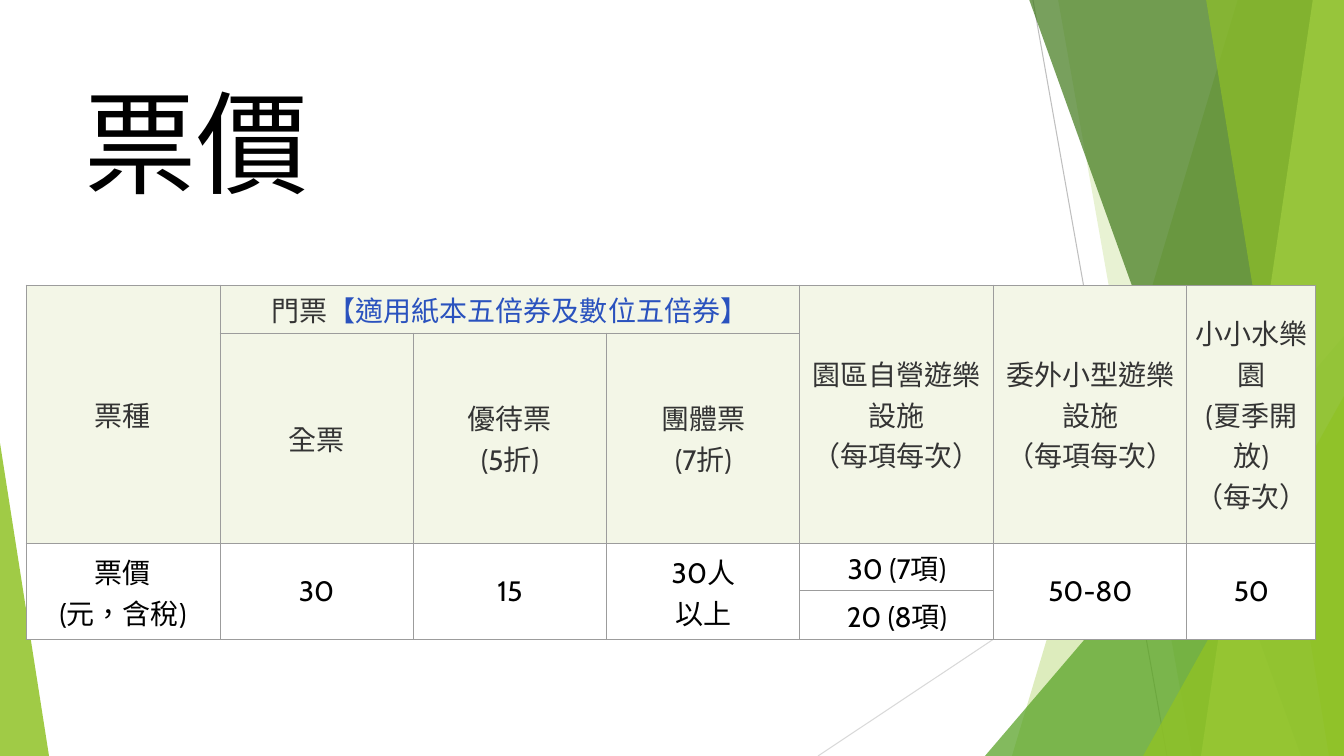
from lxml import etree
from pptx import Presentation
from pptx.dml.color import RGBColor
from pptx.enum.lang import MSO_LANGUAGE_ID
from pptx.enum.shapes import MSO_CONNECTOR, MSO_SHAPE
from pptx.enum.text import MSO_ANCHOR, PP_ALIGN
from pptx.oxml import parse_xml
from pptx.oxml.ns import nsdecls, qn
from pptx.util import Emu, Pt

PX = 914400 / 100.8
WIDTH, HEIGHT = 1344, 756
CJK_FONT = "Noto Sans CJK SC"
LATIN_FONT = "Cabin"
HEADER_FILL, PRICE_FILL = "F3F6E7", "FFFFFF"
HEADER_TEXT, PRICE_TEXT, VOUCHER_TEXT = "343434", "000000", "2A52BE"
BORDER = "9C9C9C"

TABLE_LEFT, TABLE_TOP = 26, 285
COLUMN_WIDTHS = [194, 193, 194, 193, 194, 193, 129]
ROW_HEIGHTS = [48, 210, 48, 49]

# (row, column, rows spanned, columns spanned, text)
CELLS = [
    (0, 0, 2, 1, "票種"),
    (0, 1, 1, 3, "門票"),
    (0, 4, 2, 1, "園區自營遊樂設施\v（每項每次）"),
    (0, 5, 2, 1, "委外小型遊樂設施\v（每項每次）"),
    (0, 6, 2, 1, "小小水樂園\v(夏季開放)\v（每次）"),
    (1, 1, 1, 1, "全票"),
    (1, 2, 1, 1, "優待票\v(5折)"),
    (1, 3, 1, 1, "團體票\v(7折)"),
    (2, 0, 2, 1, "票價\v(元，含稅)"),
    (2, 1, 2, 1, "30"),
    (2, 2, 2, 1, "15"),
    (2, 3, 2, 1, "30人\v以上"),
    (2, 4, 1, 1, "30 (7項)"),
    (3, 4, 1, 1, "20 (8項)"),
    (2, 5, 2, 1, "50-80"),
    (2, 6, 2, 1, "50"),
]


def px(length):
    return Emu(round(length * PX))


def rgb(color):
    return RGBColor.from_string(color)


def style_span(span, size, color, font):
    span.font.size = Pt(size)
    span.font.name = font
    span.font.color.rgb = rgb(color)
    span.font.language_id = MSO_LANGUAGE_ID.TRADITIONAL_CHINESE
    east_asian = etree.SubElement(span.font._element, qn("a:ea"))
    east_asian.set("typeface", CJK_FONT)


def paint(shape, color, opacity):
    """Fill a borderless shape with a colour at the given percent opacity."""
    shape.shadow.inherit = False
    shape.fill.solid()
    shape.fill.fore_color.rgb = rgb(color)
    shape.line.fill.background()
    color_node = shape._element.spPr.find(qn("a:solidFill"))[0]
    etree.SubElement(color_node, qn("a:alpha")).set("val", str(opacity * 1000))


def add_line(slide, start, end, color):
    line = slide.shapes.add_connector(
        MSO_CONNECTOR.STRAIGHT, *map(px, (*start, *end)))
    line.line.color.rgb = rgb(color)
    line.line.width = Pt(0.75)
    etree.SubElement(line._element.spPr, qn("a:effectLst"))


def add_band(slide, top_left, bottom_left, color, opacity):
    """Draw a full-height band that reaches the right edge of the slide."""
    builder = slide.shapes.build_freeform(top_left, -1, scale=PX)
    builder.add_line_segments(
        [(WIDTH, -1), (WIDTH, HEIGHT), (bottom_left, HEIGHT)], close=True)
    paint(builder.convert_to_shape(), color, opacity)


def add_triangle(slide, left, top, width, apex, color, opacity):
    """Draw a triangle that stands on the bottom edge of the slide."""
    triangle = slide.shapes.add_shape(
        MSO_SHAPE.ISOSCELES_TRIANGLE,
        *map(px, (left, top, width, HEIGHT - top)))
    triangle.adjustments[0] = apex
    paint(triangle, color, opacity)


def add_background(slide):
    add_line(slide, (1033, 0), (1167, HEIGHT), "BFBFBF")
    add_line(slide, (WIDTH, 406), (818, HEIGHT), "D9D9D9")
    add_band(slide, 1238, 1012, "90C226", 30)
    add_band(slide, 1058, 1192, "90C226", 20)
    add_triangle(slide, 985, 336, 359, 1, "54A021", 72)
    add_band(slide, 1029, 1301, "3F7819", 70)
    add_band(slide, 1313, 1201, "C0E474", 70)
    add_band(slide, 1206, 1329, "90C226", 65)
    add_triangle(slide, 1143, 396, 201, 1, "90C226", 80)
    add_triangle(slide, 0, 443, 49, 0, "90C226", 85)


def add_title(slide, text):
    box = slide.shapes.add_textbox(*map(px, (75, 68, 948, 145)))
    frame = box.text_frame
    frame.word_wrap = True
    frame.vertical_anchor = MSO_ANCHOR.MIDDLE
    frame.text = text
    style_span(frame.paragraphs[0].runs[0], 80, "000000", CJK_FONT)


def add_borders(cell):
    properties = cell._tc.get_or_add_tcPr()
    for index, side in enumerate(("lnL", "lnR", "lnT", "lnB")):
        properties.insert(index, parse_xml(
            f'<a:{side} {nsdecls("a")} w="{Pt(0.75)}"><a:solidFill>'
            f'<a:srgbClr val="{BORDER}"/></a:solidFill></a:{side}>'))


def fill_cell(cell, text, color):
    cell.vertical_anchor = MSO_ANCHOR.MIDDLE
    para = cell.text_frame.paragraphs[0]
    para.text = text
    para.alignment = PP_ALIGN.CENTER
    for span in para.runs:
        style_span(span, 20, color, LATIN_FONT)
    return para


def add_price_table(slide):
    table = slide.shapes.add_table(
        len(ROW_HEIGHTS), len(COLUMN_WIDTHS), px(TABLE_LEFT), px(TABLE_TOP),
        px(sum(COLUMN_WIDTHS)), px(sum(ROW_HEIGHTS))).table
    for column, width in zip(table.columns, COLUMN_WIDTHS):
        column.width = px(width)
    for index, (row, height) in enumerate(zip(table.rows, ROW_HEIGHTS)):
        row.height = px(height)
        for cell in row.cells:
            cell.margin_left = cell.margin_right = px(3)
            cell.margin_top = cell.margin_bottom = px(3)
            cell.fill.solid()
            cell.fill.fore_color.rgb = rgb(HEADER_FILL if index < 2 else PRICE_FILL)
            add_borders(cell)
    for row, column, row_span, column_span, text in CELLS:
        cell = table.cell(row, column)
        if row_span * column_span > 1:
            cell.merge(table.cell(row + row_span - 1, column + column_span - 1))
        para = fill_cell(cell, text, HEADER_TEXT if row < 2 else PRICE_TEXT)
        if text == "門票":
            voucher = para.add_run()
            voucher.text = "【適用紙本五倍券及數位五倍券】"
            style_span(voucher, 20, VOUCHER_TEXT, LATIN_FONT)


def main():
    deck = Presentation()
    deck.slide_width, deck.slide_height = px(WIDTH), px(HEIGHT)
    slide = deck.slides.add_slide(deck.slide_layouts[6])
    add_background(slide)
    add_title(slide, "票價")
    add_price_table(slide)
    deck.save("out.pptx")


if __name__ == "__main__":
    main()
